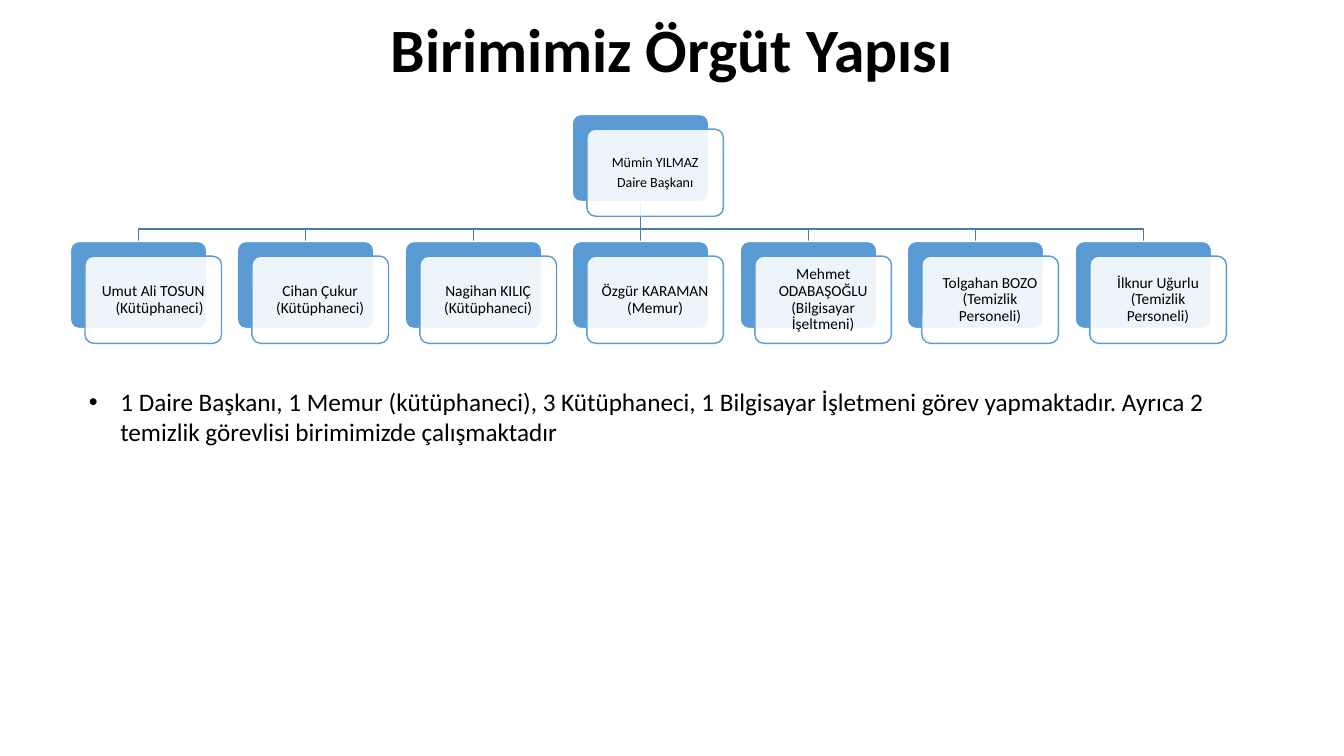
from pptx import Presentation
from pptx.dml.color import RGBColor
from pptx.enum.shapes import MSO_CONNECTOR as CONN, MSO_SHAPE as SHAPE
from pptx.enum.text import MSO_ANCHOR as ANCHOR, MSO_AUTO_SIZE as AUTO, PP_ALIGN as ALIGN
from pptx.oxml.ns import qn
from pptx.util import Pt

PX = 9525
BLACK = RGBColor(0x00, 0x00, 0x00)
WHITE = RGBColor(0xFF, 0xFF, 0xFF)
BLUE = RGBColor(0x5B, 0x9B, 0xD5)
LINK_BLUE = RGBColor(0x49, 0x7C, 0xAB)

CARD_W, CARD_H, OFFSET = 130, 83, 14
ROW_LEFT, ROW_SPAN = 67, 957
HEAD_TOP, BRANCH_Y, ROW_TOP = 109, 218, 230

HEAD = ["Mümin YILMAZ", "Daire Başkanı"]
STAFF = [
    "Umut Ali TOSUN (Kütüphaneci)",
    "Cihan Çukur (Kütüphaneci)",
    "Nagihan KILIÇ (Kütüphaneci)",
    "Özgür KARAMAN (Memur)",
    "Mehmet ODABAŞOĞLU (Bilgisayar İşeltmeni)",
    "Tolgahan BOZO (Temizlik Personeli)",
    "İlknur Uğurlu (Temizlik Personeli)",
]
DUTIES = ("1 Daire Başkanı, 1 Memur (kütüphaneci), 3 Kütüphaneci, "
          "1 Bilgisayar İşletmeni görev yapmaktadır. "
          "Ayrıca 2 temizlik görevlisi birimimizde çalışmaktadır")


def write(sp, lines, size, bold=False, align=ALIGN.CENTER, anchor=ANCHOR.MIDDLE,
          spacing=0.9, after=0, hang=0, bullet=None):
    tf = sp.text_frame
    tf.word_wrap = True
    tf.auto_size = AUTO.NONE
    tf.vertical_anchor = anchor
    for i, line in enumerate(lines):
        p = tf.paragraphs[0] if i == 0 else tf.add_paragraph()
        pPr = p._p.get_or_add_pPr()
        if hang:
            pPr.set("marL", str(hang * PX))
            pPr.set("indent", str(-hang * PX))
        if bullet:
            pPr.append(pPr.makeelement(qn("a:buChar"), {"char": bullet}))
        p.alignment = align
        p.line_spacing = spacing
        p.space_before = Pt(0)
        p.space_after = Pt(after)
        r = p.add_run()
        r.text = line
        r.font.name = "Calibri"
        r.font.size = Pt(size)
        r.font.bold = bold
        r.font.color.rgb = BLACK


def place(sp, x, y, w, h):
    sp.left, sp.top, sp.width, sp.height = (v * PX for v in (x, y, w, h))


def panel(s, x, y, fill, line, alpha=None):
    sp = s.shapes.add_shape(SHAPE.ROUNDED_RECTANGLE, x * PX, y * PX, CARD_W * PX, CARD_H * PX)
    sp.adjustments[0] = 0.1
    sp.shadow.inherit = False
    sp.fill.solid()
    sp.fill.fore_color.rgb = fill
    if alpha:
        color = sp.fill._xPr.find(qn("a:solidFill"))[0]
        color.append(color.makeelement(qn("a:alpha"), {"val": str(alpha * 1000)}))
    sp.line.color.rgb = line
    sp.line.width = Pt(1)
    return sp


def card(s, x, y, lines, size, **fmt):
    back = panel(s, x, y, BLUE, WHITE)
    front = panel(s, x + OFFSET, y + OFFSET, WHITE, BLUE, alpha=90)
    tf = front.text_frame
    tf.margin_left = tf.margin_right = tf.margin_top = tf.margin_bottom = 6 * PX
    write(front, lines, size, after=3.5, **fmt)
    return back


def style_link(sp):
    sp.line.color.rgb = LINK_BLUE
    sp.line.width = Pt(1)


def bent_link(s, x1, y1, x2, y2):
    fb = s.shapes.build_freeform(x1, y1, scale=PX)
    fb.add_line_segments([(x1, BRANCH_Y), (x2, BRANCH_Y), (x2, y2)], close=False)
    sp = fb.convert_to_shape()
    sp.shadow.inherit = False
    sp.fill.background()
    style_link(sp)


def straight_link(s, x, y1, y2):
    cxn = s.shapes.add_connector(CONN.STRAIGHT, x * PX, y1 * PX, x * PX, y2 * PX)
    spPr = cxn._element.spPr
    style_link(cxn)
    spPr.append(spPr.makeelement(qn("a:effectLst"), {}))
    return cxn


def org_chart(s):
    last = len(STAFF) - 1
    lefts = [ROW_LEFT + ROW_SPAN * i // last for i in range(len(STAFF))]
    middle = last // 2
    head_x = lefts[middle]
    head_mid, head_bottom = head_x + CARD_W // 2, HEAD_TOP + CARD_H
    for x in lefts:
        if x != head_x:
            bent_link(s, head_mid, head_bottom, x + CARD_W // 2, ROW_TOP)
    trunk = straight_link(s, head_mid, head_bottom, ROW_TOP)
    head = card(s, head_x, HEAD_TOP, HEAD, 10)
    staff = [card(s, x, ROW_TOP, [name], 11, hang=0 if i else 12)
             for i, (x, name) in enumerate(zip(lefts, STAFF))]
    trunk.begin_connect(head, 2)
    trunk.end_connect(staff[middle], 0)


def main():
    prs = Presentation()
    prs.slide_width, prs.slide_height = 1280 * PX, 720 * PX
    s = prs.slides.add_slide(prs.slide_layouts[1])
    title, body = s.placeholders
    place(title, 192, -19, 896, 139)
    write(title, ["Birimimiz Örgüt Yapısı"], 44, bold=True)
    org_chart(s)
    place(body, 75, 363, 1095, 97)
    write(body, [DUTIES], 18, align=ALIGN.LEFT, anchor=ANCHOR.TOP,
          spacing=1.0, hang=30, bullet="•")
    prs.save("out.pptx")


if __name__ == "__main__":
    main()
